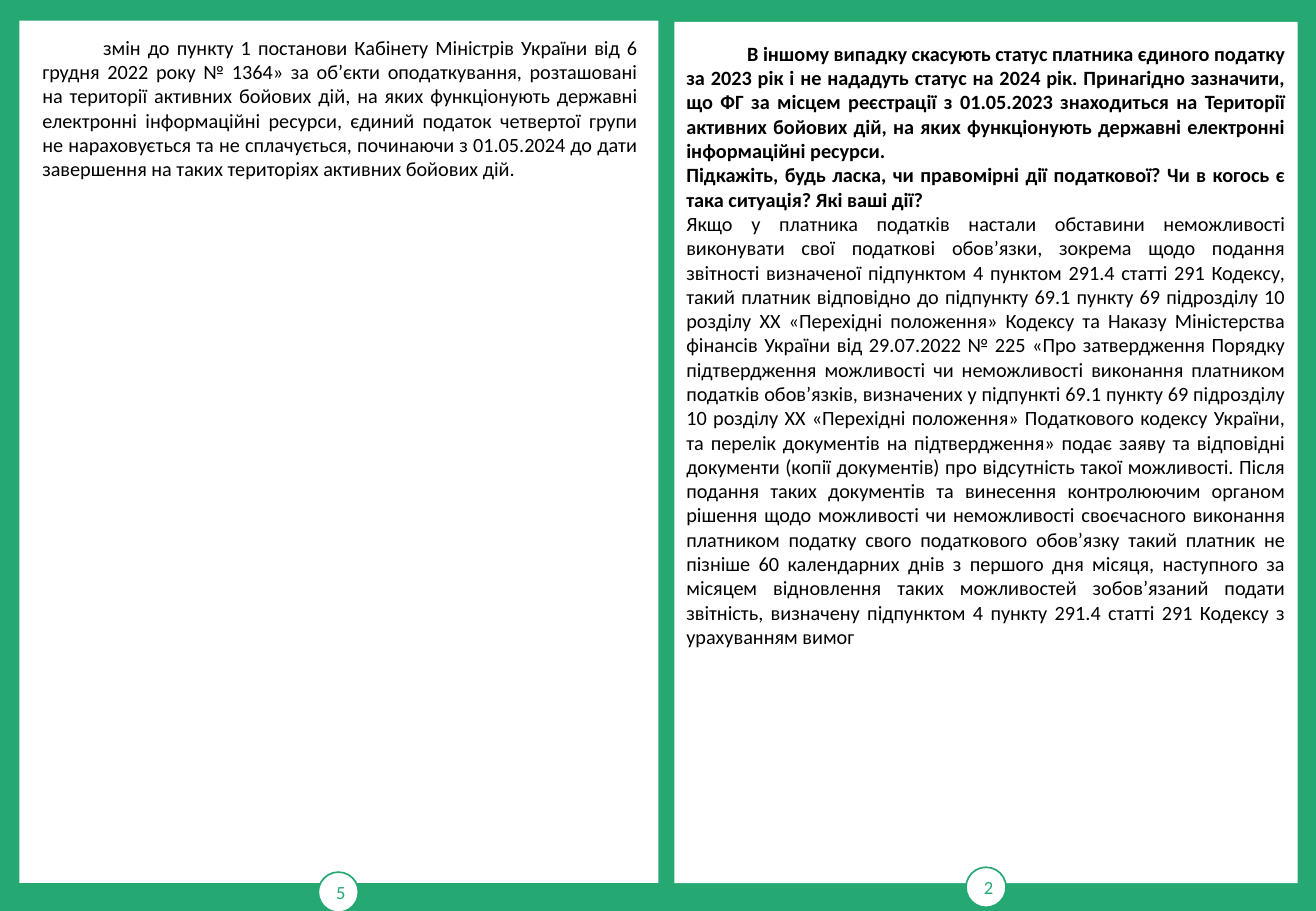
"""Builds a two-page booklet spread with numbered white pages on green."""
from pptx import Presentation
from pptx.dml.color import RGBColor
from pptx.enum.shapes import MSO_SHAPE
from pptx.enum.text import MSO_ANCHOR, MSO_AUTO_SIZE, PP_ALIGN
from pptx.util import Inches, Pt

RECTANGLE, OVAL = MSO_SHAPE.RECTANGLE, MSO_SHAPE.OVAL
MIDDLE = MSO_ANCHOR.MIDDLE
CENTER, JUSTIFY = PP_ALIGN.CENTER, PP_ALIGN.JUSTIFY
FIT_SHAPE = MSO_AUTO_SIZE.SHAPE_TO_FIT_TEXT

GREEN, WHITE, BLACK = "25A872", "FFFFFF", "000000"
FONT = "Calibri"
BADGE_SIZE = 0.33
FIRST_LINE_INDENT = 0.5

PAGES = [
    {"number": "5", "sheet": (0.16, 0.17, 5.26, 7.1), "badge": (2.62, 7.18)},
    {"number": "2", "sheet": (5.55, 0.18, 5.13, 7.09), "badge": (7.95, 7.14)},
]

TEXTS = [
    {"box": (5.55, 0.29, 5.13, 6.97), "paragraphs": [
        {"bold": True, "indented": True, "parts": [
            "В іншому випадку скасують статус платника єдиного податку за 2023 рік і не нададуть",
            "статус на 2024 рік. Принагідно зазначити, що ФГ за місцем реєстрації з 01.05.2023",
            "знаходиться на Території активних бойових дій, на яких функціонують державні",
            "електронні інформаційні ресурси.",
        ]},
        {"bold": True, "indented": False, "parts": [
            "Підкажіть, будь ласка, чи правомірні дії податкової? Чи в когось є така ситуація?",
            "Які ваші дії?",
        ]},
        {"bold": False, "indented": False, "parts": [
            "Якщо у платника податків настали обставини неможливості виконувати свої податкові",
            "обов’язки, зокрема щодо подання звітності визначеної підпунктом 4 пунктом 291.4",
            "статті 291 Кодексу, такий платник відповідно до підпункту 69.1 пункту 69 підрозділу",
            "10 розділу XX «Перехідні положення» Кодексу та Наказу Міністерства фінансів України",
            "від 29.07.2022 № 225 «Про затвердження Порядку підтвердження можливості чи",
            "неможливості виконання платником податків обов’язків, визначених у підпункті 69.1",
            "пункту 69 підрозділу 10 розділу XX «Перехідні положення» Податкового кодексу України,",
            "та перелік документів на підтвердження» подає заяву та відповідні документи (копії",
            "документів) про відсутність такої можливості. Після подання таких документів та",
            "винесення контролюючим органом рішення щодо можливості чи неможливості своєчасного",
            "виконання платником податку свого податкового обов’язку такий платник не пізніше 60",
            "календарних днів з першого дня місяця, наступного за місяцем відновлення таких",
            "можливостей зобов’язаний подати звітність, визначену підпунктом 4 пункту 291.4",
            "статті 291 Кодексу з урахуванням вимог",
        ]},
    ]},
    {"box": (0.25, 0.24, 5.1, 2.12), "paragraphs": [
        {"bold": False, "indented": True, "parts": [
            "змін до пункту 1 постанови Кабінету Міністрів України від 6 грудня 2022 року № 1364»",
            "за об’єкти оподаткування, розташовані на території активних бойових дій, на яких",
            "функціонують державні електронні інформаційні ресурси, єдиний податок четвертої групи",
            "не нараховується та не сплачується, починаючи з 01.05.2024 до дати завершення на",
            "таких територіях активних бойових дій.",
        ]},
    ]},
]


def set_color(color_format, value):
    color_format.rgb = RGBColor.from_string(value)


def fill_solid(fill, value):
    fill.solid()
    set_color(fill.fore_color, value)


def write_paragraph(paragraph, text, size, color, alignment, bold=False):
    paragraph.text = text
    paragraph.alignment = alignment
    for run in paragraph.runs:
        run.font.name = FONT
        run.font.size = Pt(size)
        run.font.bold = bold
        set_color(run.font.color, color)


def add_white_shape(group, kind, box):
    shape = group.shapes.add_shape(kind, *map(Inches, box))
    shape.shadow.inherit = False
    fill_solid(shape.fill, WHITE)
    return shape


def add_page(slide, page):
    group = slide.shapes.add_group_shape()
    sheet = add_white_shape(group, RECTANGLE, page["sheet"])
    sheet.line.fill.background()
    badge = add_white_shape(group, OVAL, (*page["badge"], BADGE_SIZE, BADGE_SIZE))
    set_color(badge.line.color, GREEN)
    badge.line.width = Pt(1)
    badge.text_frame.vertical_anchor = MIDDLE
    write_paragraph(badge.text_frame.paragraphs[0], page["number"], 11, GREEN, CENTER)


def add_page_text(slide, box, paragraphs):
    text_frame = slide.shapes.add_textbox(*map(Inches, box)).text_frame
    text_frame.word_wrap = True
    text_frame.auto_size = FIT_SHAPE
    for index, content in enumerate(paragraphs):
        paragraph = text_frame.add_paragraph() if index else text_frame.paragraphs[0]
        text = " ".join(content["parts"])
        write_paragraph(paragraph, text, 12, BLACK, JUSTIFY, content["bold"])
        if content["indented"]:
            paragraph._p.get_or_add_pPr().set("indent", str(Inches(FIRST_LINE_INDENT)))


def main():
    presentation = Presentation()
    presentation.slide_width = Inches(10.83)
    presentation.slide_height = Inches(7.5)
    slide = presentation.slides.add_slide(presentation.slide_layouts[6])
    fill_solid(slide.background.fill, GREEN)
    for page in PAGES:
        add_page(slide, page)
    for text in TEXTS:
        add_page_text(slide, text["box"], text["paragraphs"])
    presentation.save("out.pptx")


if __name__ == "__main__":
    main()
